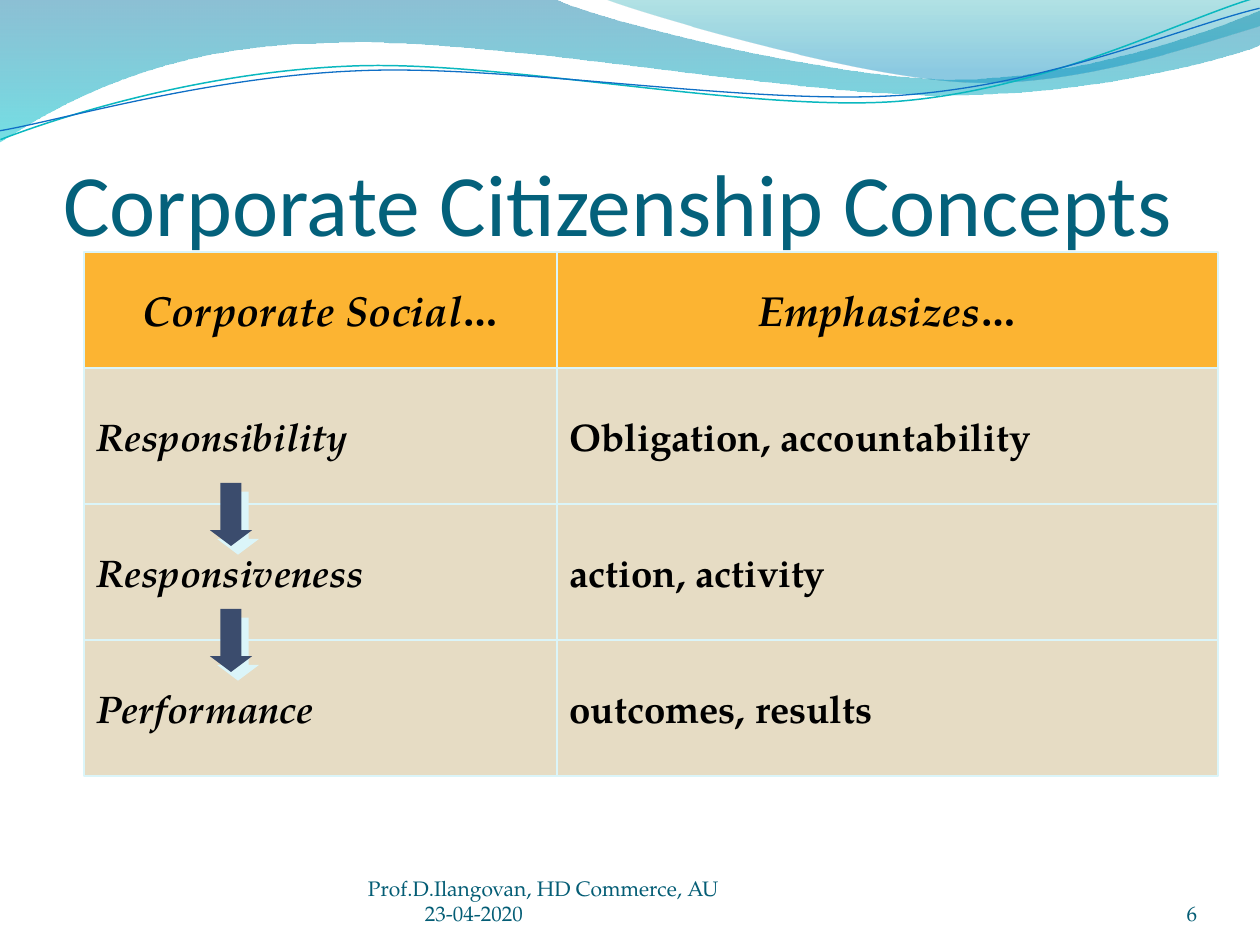
"""Build the Corporate Citizenship Concepts slide."""
from lxml import etree
from pptx import Presentation
from pptx import util as u
from pptx.dml.color import RGBColor
from pptx.enum import shapes, text
from pptx.oxml import ns

SCALE = 914400 / 126
SERIF = "TeX Gyre Pagella"
BLACK = RGBColor(0, 0, 0)
TEAL = RGBColor(0x04, 0x61, 0x7B)
FOOT = RGBColor(0x04, 0x5D, 0x75)
GOLD = RGBColor(0xFC, 0xB4, 0x32)
SAND = RGBColor(0xE6, 0xDC, 0xC4)
ICE = RGBColor(0xDB, 0xF5, 0xF9)
NAVY = RGBColor(0x3B, 0x4C, 0x6D)
CYAN = RGBColor(0x0A, 0xB8, 0xBF)
BLUE = RGBColor(0x0F, 0x6F, 0xC6)

BANDS = [
    ([(0, 0), (554, -1), (600, 21, 837, 79, 955, 79), (1075, 79, 1207, 33, 1260, 11),
      (1261, 45), (1239, 55, 1096, 96, 940, 95), (784, 95, 481, 35, 324, 43),
      (161, 45, 58, 105, -1, 142)],
     [(0, RGBColor(0x00, 0x74, 0xA1), 45), (1, RGBColor(0x00, 0xC6, 0xCF), 55)]),
    ([(604, -1), (641, 14, 859, 78, 969, 82), (1079, 87, 1211, 40, 1260, 26), (1260, 0)],
     [(0, RGBColor(0x00, 0xA1, 0xA9), 30), (0.8, RGBColor(0x00, 0x8B, 0xBF), 45)]),
]
WAVES = [
    ([(-2, 110), (58, 90, 199, 52, 350, 53), (499, 53, 745, 118, 896, 114),
      (1049, 109, 1184, 45, 1260, 27)], CYAN, 0.85),
    ([(-2, 101), (57, 94, 207, 57, 357, 58), (509, 58, 750, 112, 902, 108),
      (1052, 104, 1187, 52, 1262, 38)], BLUE, 0.75),
]
COLS = [(84, 473), (557, 661)]
ROWS = [
    (252, 116, ("Corporate Social…", "Emphasizes…")),
    (368, 136, ("Responsibility", "Obligation, accountability")),
    (504, 136, ("Responsiveness", "action, activity")),
    (640, 136, ("Performance", "outcomes, results")),
]


def px(*vals):
    """Turn pixel lengths into a list of EMU lengths."""
    return [u.Emu(round(val * SCALE)) for val in vals]


def add_tag(parent, name, **attrs):
    """Append a DrawingML child element."""
    return etree.SubElement(parent, ns.qn(f"a:{name}"), attrs)


def set_font(para, name, size, color, bold=False, slant=False):
    """Format the font of a paragraph."""
    font = para.font
    font.name, font.size, font.bold, font.italic = name, u.Pt(size), bold, slant
    font.color.rgb = color


def add_free(slide, path, close):
    """Add an outline whose six-number parts become cubic curves."""
    pen = slide.shapes.build_freeform(*px(*path[0]))
    for part in path[1:]:
        ends = px(*part)
        pen.add_line_segments(list(zip(ends[::2], ends[1::2])), close=False)
    if close:
        pen.add_line_segments([], close=True)
    shape = pen.convert_to_shape()
    shape.shadow.inherit = False
    legs = iter(shape.element.spPr.findall(".//" + ns.qn("a:lnTo")))
    for part in path[1:]:
        leg = next(legs)
        if len(part) == 6:
            leg.tag = ns.qn("a:cubicBezTo")
            for _ in range(2):
                extra = next(legs)
                leg.append(extra[0])
                extra.getparent().remove(extra)
    return shape


def add_band(slide, path, stops):
    """Add a wave filled with a translucent gradient."""
    shape = add_free(slide, path, True)
    shape.line.fill.background()
    shape.fill.gradient()
    shape.fill.gradient_angle = 270
    for stop, (place, color, _) in zip(shape.fill.gradient_stops, stops):
        stop.position, stop.color.rgb = place, color
    tints = shape.element.spPr.findall(".//" + ns.qn("a:srgbClr"))
    for tint, (_, _, alpha) in zip(tints, stops):
        add_tag(tint, "alpha", val=str(alpha * 1000))


def add_wave(slide, path, color, width):
    """Add a thin curved line, slightly turned."""
    shape = add_free(slide, path, False)
    shape.rotation = 357.3
    shape.fill.background()
    shape.line.color.rgb, shape.line.width = color, u.Pt(width)


def set_title(slide, words):
    """Place and format the title."""
    title = slide.shapes.title
    title.left, title.top, title.width, title.height = px(63, 97, 1134, 157)
    frame = title.text_frame
    frame.text = words
    frame.margin_left = frame.margin_right = frame.margin_bottom = 0
    frame.vertical_anchor = text.MSO_ANCHOR.BOTTOM
    frame.auto_size = text.MSO_AUTO_SIZE.NONE
    para = frame.paragraphs[0]
    para.alignment = text.PP_ALIGN.LEFT
    set_font(para, "Calibri", 50, TEAL)


def add_note(slide, box, lines, align):
    """Add a footer text box and return its paragraphs."""
    frame = slide.shapes.add_textbox(*px(*box)).text_frame
    frame.word_wrap = True
    frame.margin_left = frame.margin_right = frame.margin_top = frame.margin_bottom = 0
    frame.vertical_anchor = text.MSO_ANCHOR.BOTTOM
    frame.text = "\n".join(lines)
    for para in frame.paragraphs:
        para.alignment = align
        set_font(para, SERIF, 12, FOOT)
    return frame.paragraphs


def add_cell(group, box, word, head, slant):
    """Add one bordered box of the grid."""
    cell = group.shapes.add_shape(shapes.MSO_SHAPE.RECTANGLE, *px(*box))
    cell.shadow.inherit = False
    cell.fill.solid()
    cell.fill.fore_color.rgb = GOLD if head else SAND
    cell.line.color.rgb, cell.line.width = ICE, u.Pt(0.75)
    frame = cell.text_frame
    frame.text = word
    frame.word_wrap = False
    frame.vertical_anchor = text.MSO_ANCHOR.MIDDLE
    para = frame.paragraphs[0]
    para.alignment = text.PP_ALIGN.CENTER if head else text.PP_ALIGN.LEFT
    set_font(para, SERIF, 24 if head else 22, BLACK, True, slant)


def add_grid(slide):
    """Add the grouped grid of concepts."""
    group = slide.shapes.add_group_shape()
    for c, (left, width) in enumerate(COLS):
        for r, (top, height, words) in enumerate(ROWS):
            add_cell(group, (left, top, width, height), words[c], r == 0, r == 0 or c == 0)


def add_arrow(slide, top):
    """Add a down arrow with a hard shadow."""
    arrow = slide.shapes.add_shape(shapes.MSO_SHAPE.DOWN_ARROW, *px(210, top, 42, 63))
    arrow.adjustments[1] = 0.375
    arrow.fill.solid()
    arrow.fill.fore_color.rgb = NAVY
    arrow.line.fill.background()
    arrow.shadow.inherit = False
    effects = arrow.element.spPr.find(ns.qn("a:effectLst"))
    shade = add_tag(effects, "outerShdw", dist=str(u.Pt(6.4)), dir=str(51 * 60000),
                    algn="ctr", rotWithShape="0")
    add_tag(shade, "srgbClr", val=str(ICE))


def main():
    """Build and save the slide."""
    deck = Presentation()
    deck.slide_width, deck.slide_height = px(1260, 945)
    slide = deck.slides.add_slide(deck.slide_layouts[5])
    for band in BANDS:
        add_band(slide, *band)
    for wave in WAVES:
        add_wave(slide, *wave)
    add_note(slide, (1092, 876, 105, 50), ["6"], text.PP_ALIGN.RIGHT)
    set_title(slide, "Corporate Citizenship Concepts")
    add_grid(slide)
    for top in (483, 609):
        add_arrow(slide, top)
    lines = add_note(slide, (368, 876, 462, 50),
                     ["Prof.D.Ilangovan, HD Commerce, AU", "23-04-2020"], text.PP_ALIGN.LEFT)
    lines[1]._p.get_or_add_pPr().set("marL", str(px(57)[0]))
    deck.save("out.pptx")


if __name__ == "__main__":
    main()
